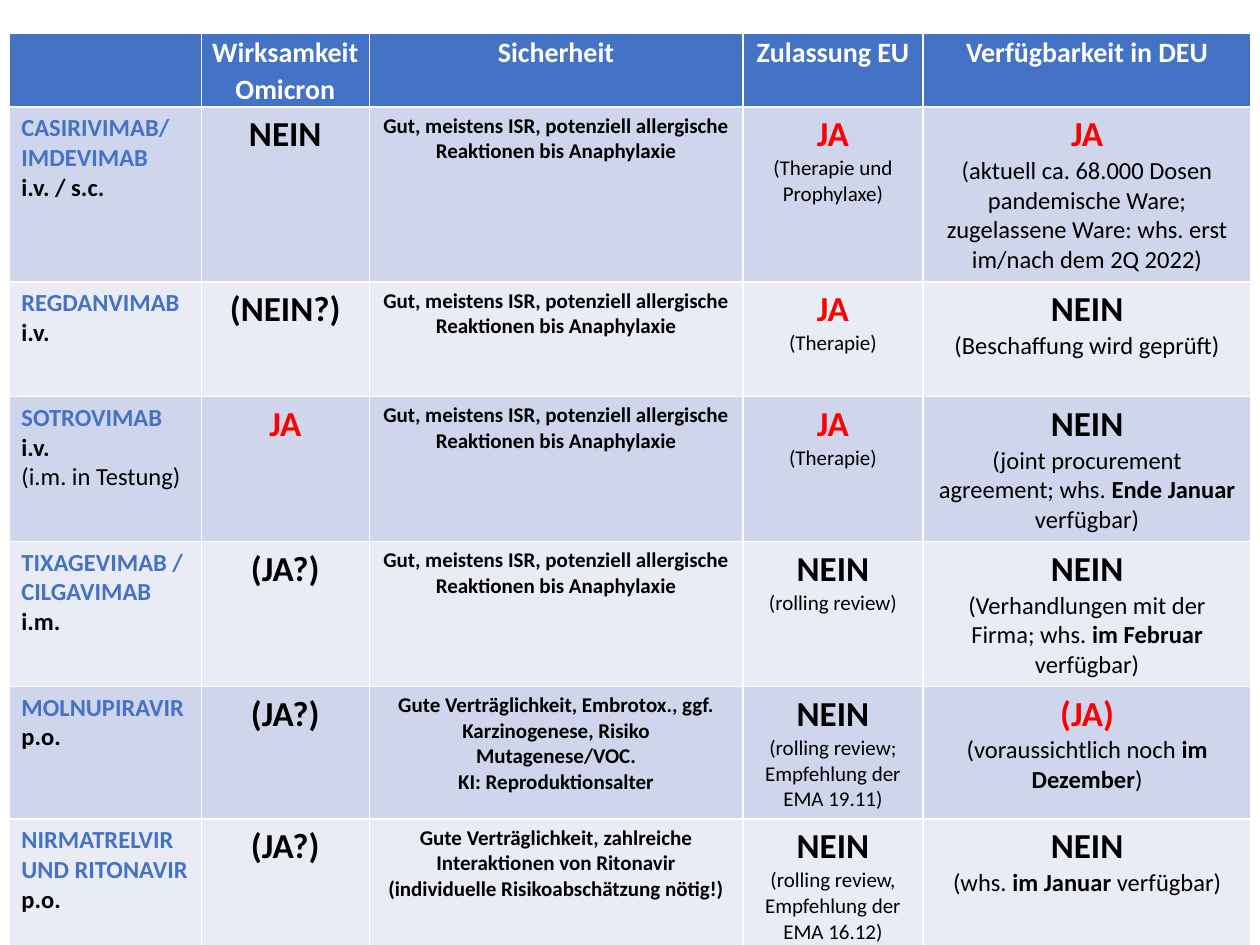
from pptx import Presentation
from pptx import util as u
from pptx.dml.color import RGBColor
from pptx.enum import text

COLORS = {
    "header": "4472C4", "odd_row": "CFD5EA", "even_row": "E9EBF5",
    "drug": "4472C4", "yes": "FF0000", "body": "000000", "heading": "FFFFFF",
}
FONT = "Calibri"

HEADINGS = ["", "Wirksamkeit Omicron", "Sicherheit", "Zulassung EU",
            "Verfügbarkeit in DEU"]
ANTIBODY_SAFETY = ["Gut, meistens ISR, potenziell allergische "
                   "Reaktionen bis Anaphylaxie"]

# Drug, routes, Omicron verdict, safety, EU approval, availability.
# Asterisks enclose the bold part of a detail.
TREATMENTS = [
    ("CASIRIVIMAB/ IMDEVIMAB", ["i.v. / s.c."], "NEIN", ANTIBODY_SAFETY,
     ("JA", "(Therapie und Prophylaxe)"),
     ("JA", "(aktuell ca. 68.000 Dosen pandemische Ware; "
            "zugelassene Ware: whs. erst im/nach dem 2Q 2022)")),
    ("REGDANVIMAB", ["i.v."], "(NEIN?)", ANTIBODY_SAFETY,
     ("JA", "(Therapie)"),
     ("NEIN", "(Beschaffung wird geprüft)")),
    ("SOTROVIMAB", ["i.v.", "(i.m. in Testung)"], "JA", ANTIBODY_SAFETY,
     ("JA", "(Therapie)"),
     ("NEIN", "(joint procurement agreement; whs. *Ende Januar *verfügbar)")),
    ("TIXAGEVIMAB / CILGAVIMAB", ["i.m."], "(JA?)", ANTIBODY_SAFETY,
     ("NEIN", "(rolling review)"),
     ("NEIN", "(Verhandlungen mit der Firma; whs. *im Februar *verfügbar)")),
    ("MOLNUPIRAVIR", ["p.o."], "(JA?)",
     ["Gute Verträglichkeit, Embrotox., ggf. Karzinogenese, Risiko "
      "Mutagenese/VOC.", "KI: Reproduktionsalter"],
     ("NEIN", "(rolling review; Empfehlung der EMA 19.11)"),
     ("(JA)", "(voraussichtlich noch *im Dezember*)")),
    ("NIRMATRELVIR UND RITONAVIR", ["p.o."], "(JA?)",
     ["Gute Verträglichkeit, zahlreiche Interaktionen von Ritonavir "
      "(individuelle Risikoabschätzung nötig!)"],
     ("NEIN", "(rolling review, Empfehlung der EMA 16.12)"),
     ("NEIN", "(whs. *im Januar *verfügbar)")),
]

LEFT, TOP = 5.04, 19.2
COLUMN_WIDTHS = [110, 96, 213.5, 103, 187.5]
ROW_HEIGHTS = [41.7, 100, 65.6, 82.8, 82.8, 75.4, 72]


def line(content, size, bold=True, color="body"):
    """One paragraph as (runs, size, colour); asterisks switch bold over."""
    runs = [(part, bold != bool(i % 2))
            for i, part in enumerate(content.split("*")) if part]
    return runs, size, color


def verdict(answer):
    return line(answer, 20, color="yes" if answer in ("JA", "(JA)") else "body")


def treatment_cells(drug, routes, omicron, safety, approval, availability):
    return [
        [line(drug, 14, color="drug")]
        + [line(route, 14, bold=not route.startswith("(")) for route in routes],
        [verdict(omicron)],
        [line(remark, 12) for remark in safety],
        [verdict(approval[0]), line(approval[1], 12, bold=False)],
        [verdict(availability[0]), line(availability[1], 14, bold=False)],
    ]


def fill_cell(cell, lines, fill, centred, spacing=None):
    cell.fill.solid()
    cell.fill.fore_color.rgb = RGBColor.from_string(COLORS[fill])
    frame = cell.text_frame
    for i, (runs, size, color) in enumerate(lines):
        paragraph = frame.add_paragraph() if i else frame.paragraphs[0]
        paragraph.alignment = (text.PP_ALIGN.CENTER if centred
                               else text.PP_ALIGN.LEFT)
        if spacing:
            paragraph.line_spacing = spacing
        for content, bold in runs:
            run = paragraph.add_run()
            run.text = content
            run.font.name = FONT
            run.font.size = u.Pt(size)
            run.font.bold = bold
            run.font.color.rgb = RGBColor.from_string(COLORS[color])


def main():
    deck = Presentation()
    deck.slide_width, deck.slide_height = u.Pt(720), u.Pt(540)
    slide = deck.slides.add_slide(deck.slide_layouts[6])
    overview = slide.shapes.add_table(
        len(ROW_HEIGHTS), len(COLUMN_WIDTHS), u.Pt(LEFT), u.Pt(TOP),
        u.Pt(sum(COLUMN_WIDTHS)), u.Pt(sum(ROW_HEIGHTS))).table
    for column, width in zip(overview.columns, COLUMN_WIDTHS):
        column.width = u.Pt(width)
    for row, height in zip(overview.rows, ROW_HEIGHTS):
        row.height = u.Pt(height)

    for c, heading in enumerate(HEADINGS):
        cell = overview.cell(0, c)
        cell.margin_left = cell.margin_right = u.Pt(5)
        cell.margin_top = cell.margin_bottom = 0
        fill_cell(cell, [line(heading, 16, color="heading")], "header",
                  centred=True, spacing=1.07)
    for r, treatment in enumerate(TREATMENTS, 1):
        band = "odd_row" if r % 2 else "even_row"
        for c, lines in enumerate(treatment_cells(*treatment)):
            fill_cell(overview.cell(r, c), lines, band, centred=c > 0)

    deck.save("out.pptx")


if __name__ == "__main__":
    main()
